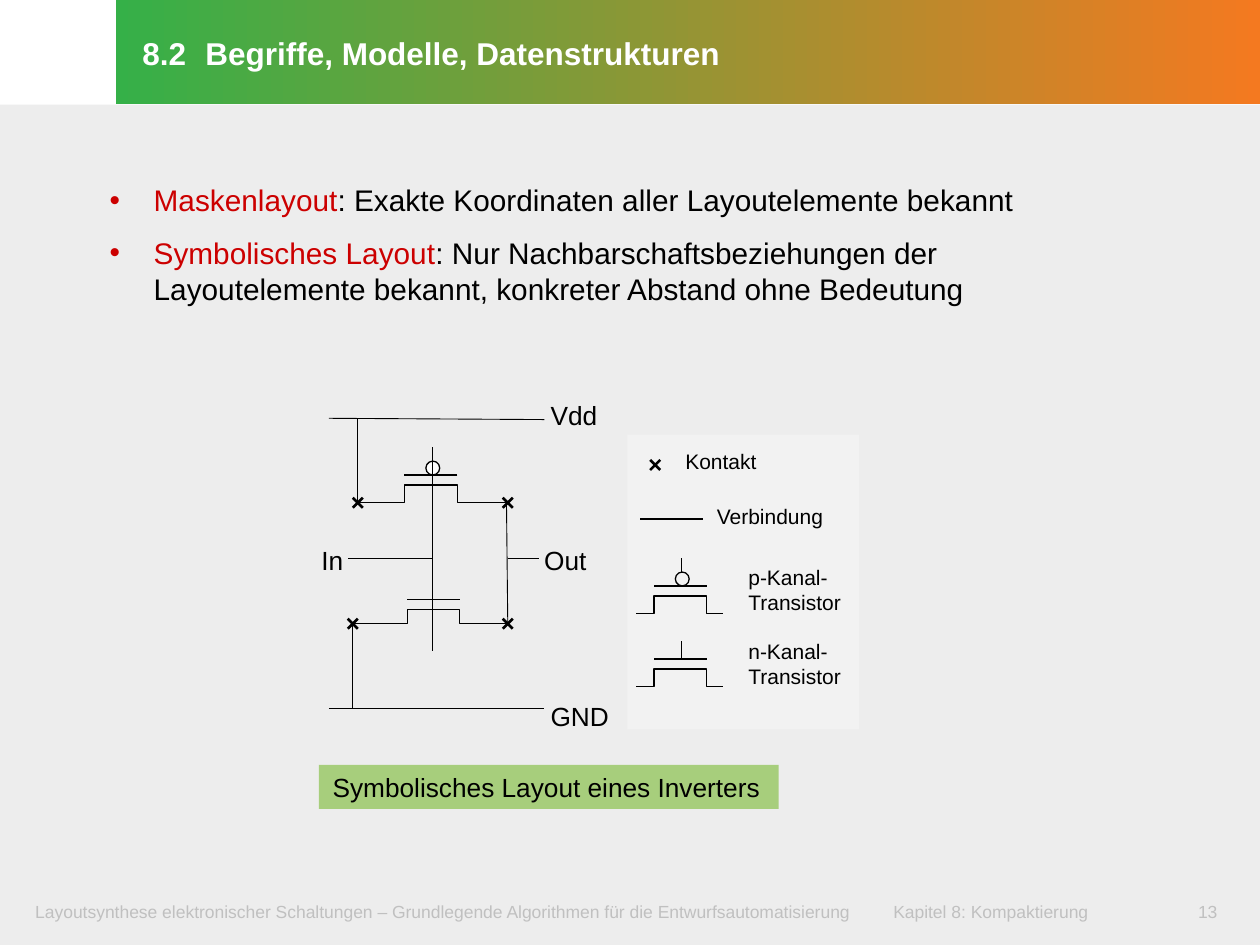
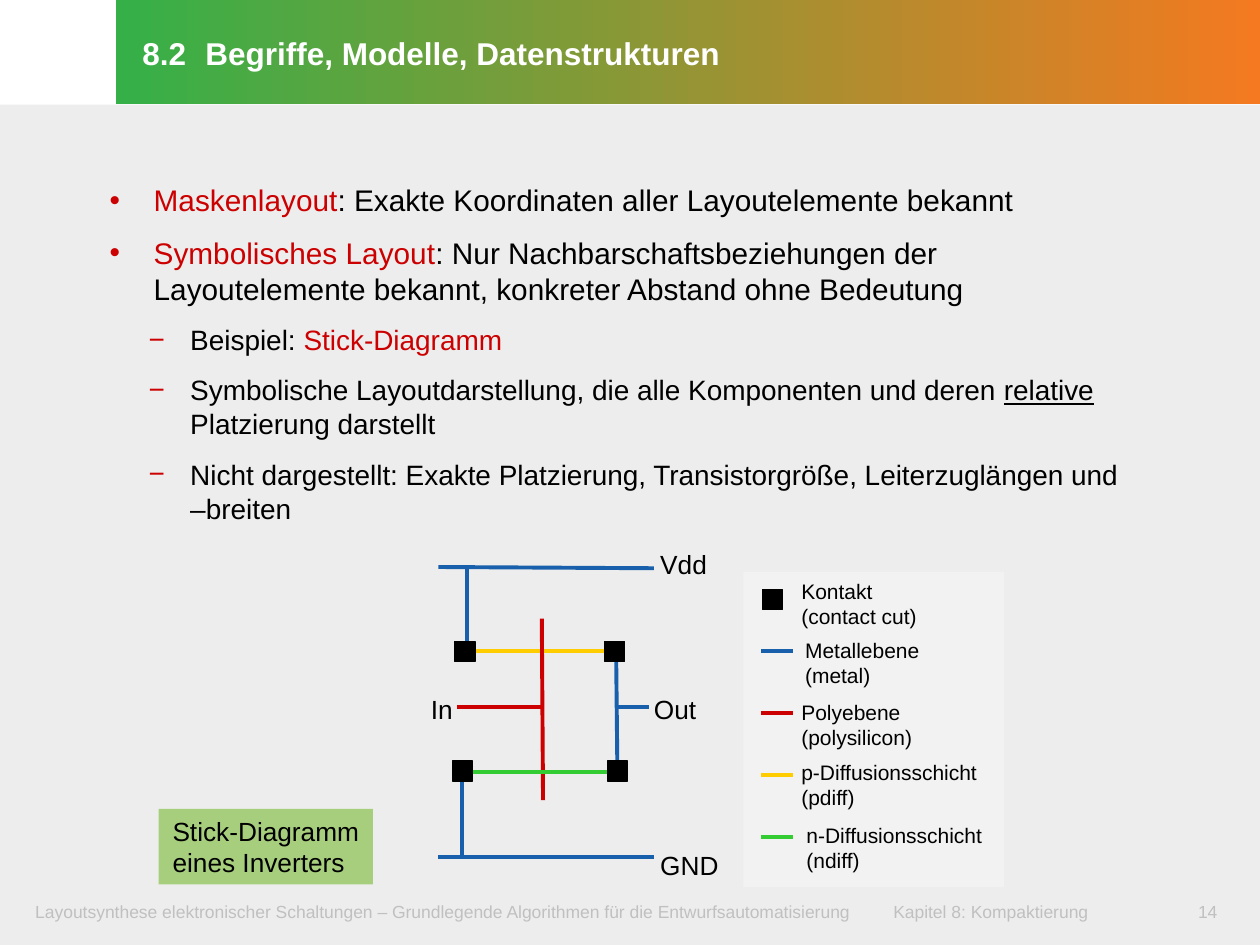
"""Build two slides on the symbolic layout and the stick diagram of an inverter."""
from lxml.etree import SubElement
from pptx import Presentation
from pptx.dml.color import RGBColor
from pptx.enum.shapes import MSO_CONNECTOR, MSO_SHAPE
from pptx.enum.text import MSO_ANCHOR, PP_ALIGN
from pptx.oxml.ns import qn
from pptx.util import Inches, Pt

FONT = "Arial"
BLACK, WHITE, RED = "000000", "FFFFFF", "CC0000"
BACKDROP, LEGEND, CAPTION, FOOTER = "EDEDED", "F2F2F2", "A7CE7C", "C0C0C0"
METAL, POLY, P_DIFFUSION, N_DIFFUSION = "1860AB", RED, "FFCC00", "33CC33"
TITLE = "8.2\tBegriffe, Modelle, Datenstrukturen"
BOOK = "Layoutsynthese elektronischer Schaltungen – Grundlegende Algorithmen für die Entwurfsautomatisierung"
CHAPTER = "Kapitel 8: Kompaktierung"


def add_box(slide, box, text="", size=15, color=BLACK, fill=None, margins=(0.11, 0.05, 0.11, 0.05)):
    """Add a text box, or a filled rectangle when a fill is given."""
    lengths = [Inches(value) for value in box]
    if fill:
        shape = slide.shapes.add_shape(MSO_SHAPE.RECTANGLE, *lengths)
        shape.shadow.inherit = False
        shape.fill.solid()
        shape.fill.fore_color.rgb = RGBColor.from_string(fill)
        shape.line.fill.background()
    else:
        shape = slide.shapes.add_textbox(*lengths)
    frame = shape.text_frame
    frame.word_wrap = True
    frame.vertical_anchor = MSO_ANCHOR.TOP
    frame.margin_left, frame.margin_top, frame.margin_right, frame.margin_bottom = map(Inches, margins)
    paragraph = frame.paragraphs[0]
    paragraph.alignment = PP_ALIGN.LEFT
    for number, row in enumerate(text.split("\n") if text else []):
        if number:
            paragraph.add_line_break()
            SubElement(paragraph._p.findall(qn("a:br"))[-1], qn("a:rPr"), sz=str(size * 100))
        run = paragraph.add_run()
        run.text = row
        run.font.name = FONT
        run.font.size = Pt(size)
        run.font.color.rgb = RGBColor.from_string(color)
    return shape


def add_line(slide, x1, y1, x2, y2, width=0.75, color=BLACK):
    """Add a straight line without a shadow."""
    line = slide.shapes.add_connector(MSO_CONNECTOR.STRAIGHT, Inches(x1), Inches(y1), Inches(x2), Inches(y2))
    line.line.width = Pt(width)
    line.line.color.rgb = RGBColor.from_string(color)
    SubElement(line._element.spPr, qn("a:effectLst"))


main_points = [
    (0, [("Maskenlayout", RED, False), (": Exakte Koordinaten aller Layoutelemente bekannt", BLACK, False)]),
    (0, [("Symbolisches Layout", RED, False),
         (": Nur Nachbarschaftsbeziehungen der Layoutelemente bekannt, konkreter Abstand ohne Bedeutung",
          BLACK, False)]),
]
stick_points = [
    (1, [("Beispiel: ", BLACK, False), ("Stick-Diagramm", RED, False)]),
    (1, [("Symbolische Layoutdarstellung, die alle Komponenten und deren ", BLACK, False),
         ("relative", BLACK, True), (" Platzierung darstellt", BLACK, False)]),
    (1, [("Nicht dargestellt: Exakte Platzierung, Transistorgröße, Leiterzuglängen und –breiten", BLACK, False)]),
]
levels = [("•", 17, 0.35, 0.35), ("−", 16, 0.64, 0.33)]

presentation = Presentation()
presentation.slide_width, presentation.slide_height = Inches(10), Inches(7.5)
slides = []
for page, points in ((13, main_points), (14, main_points + stick_points)):
    slide = presentation.slides.add_slide(presentation.slide_layouts[6])
    slides.append(slide)
    add_box(slide, (0, 0.83, 10, 6.67), fill=BACKDROP)

    footer_margins = (0.12, 0.06, 0.12, 0.06)
    footer = add_box(slide, (0.16, 7.09, 9.1, 0.32), f"{BOOK}\t{CHAPTER}", 10, FOOTER, margins=footer_margins)
    tabs = SubElement(footer.text_frame.paragraphs[0]._p.get_or_add_pPr(), qn("a:tabLst"))
    SubElement(tabs, qn("a:tab"), pos=str(Inches(6.81)), algn="l")
    number = add_box(slide, (9.29, 7.09, 0.59, 0.32), str(page), 10, FOOTER, margins=footer_margins)
    number.text_frame.paragraphs[0].alignment = PP_ALIGN.CENTER

    body = add_box(slide, (0.66, 1.39, 8.35, 4.92), margins=(0.21, 0.05, 0.1, 0.05)).text_frame
    for index, (level, runs) in enumerate(points):
        bullet, size, indent, hanging = levels[level]
        paragraph = body.add_paragraph() if index else body.paragraphs[0]
        paragraph.level = level
        properties = paragraph._p.get_or_add_pPr()
        properties.set("marL", str(Inches(indent)))
        properties.set("indent", str(-Inches(hanging)))
        SubElement(SubElement(properties, qn("a:buClr")), qn("a:srgbClr"), val=RED)
        SubElement(properties, qn("a:buFont"), typeface=FONT)
        SubElement(properties, qn("a:buChar"), char=bullet)
        paragraph.line_spacing = 1.02
        if index:
            paragraph.space_before = Pt(9)
        for text, color, underline in runs:
            run = paragraph.add_run()
            run.text = text
            run.font.name = FONT
            run.font.size = Pt(size)
            run.font.color.rgb = RGBColor.from_string(color)
            if underline:
                run.font.underline = True

    title = add_box(slide, (0.92, 0, 9.08, 0.83), TITLE, 18, WHITE, METAL, (0.21, 0.05, 0.1, 0.07))
    title.fill.gradient()
    title.fill.gradient_angle = 0
    for stop, (position, color) in zip(title.fill.gradient_stops, ((0, "35B048"), (1, "F47920"))):
        stop.position = position
        stop.color.rgb = RGBColor.from_string(color)
    title.text_frame.vertical_anchor = MSO_ANCHOR.MIDDLE
    title.text_frame.paragraphs[0].line_spacing = Pt(23.5)
    title.text_frame.paragraphs[0].runs[0].font.bold = True

symbolic, stick = slides

wires = [
    (2.61, 3.32, 4.32, 3.33, 0.5, METAL),
    (2.84, 3.99, 2.84, 3.32, 0.75, METAL),
    (4.02, 3.99, 4.03, 4.95, 0.5, METAL),
    (2.8, 5.62, 2.8, 4.95, 0.75, METAL),
    (2.61, 5.62, 4.32, 5.62, 0.5, METAL),
    (4.03, 4.43, 4.28, 4.43, 0.75, METAL),
    (3.43, 4.43, 2.76, 4.43, 0.5, POLY),
]
terminals = [("Vdd", 4.26, 3.12, 0.78), ("GND", 4.26, 5.51, 0.69), ("Out", 4.21, 4.27, 0.66), ("In", 2.44, 4.27, 0.51)]
stick_dx, stick_dy = 0.87, 1.18
for x1, y1, x2, y2, width, layer in wires:
    add_line(symbolic, x1, y1, x2, y2, width)
    add_line(stick, x1 + stick_dx, y1 + stick_dy, x2 + stick_dx, y2 + stick_dy, 2.25, layer)
for text, left, top, width in terminals:
    add_box(symbolic, (left, top, width, 0.35), text)
    add_box(stick, (left + stick_dx, top + stick_dy, width, 0.35), text)

add_box(symbolic, (4.98, 3.45, 1.84, 2.34), fill=LEGEND)
transistors = [
    (3.21, 3.85, 3.07, 3.77, 0.14, 0.3, WHITE, True),
    (3.23, 4.84, 2.8, 4.02, 0.11, 0, None, False),
    (5.19, 4.73, 5.05, 5.74, 0.14, 0.3, None, True),
    (5.19, 5.31, 5.05, 5.74, 0.14, 0.22, None, False),
]
for gate, top, lead_left, lead_right, depth, stub, bubble_fill, p_channel in transistors:
    gate_right, base = gate + 0.42, top + depth
    outline = [(lead_left, base), (gate, base), (gate, top), (gate_right, top), (gate_right, base), (lead_right, base)]
    corners = [(Inches(x), Inches(y)) for x, y in outline]
    builder = symbolic.shapes.build_freeform(*corners[0], scale=1.0)
    builder.add_line_segments(corners[1:], close=False)
    parts = [builder.convert_to_shape()]
    if p_channel:
        parts.append(symbolic.shapes.add_shape(
            MSO_SHAPE.OVAL, Inches(gate + 0.17), Inches(top - 0.19), Inches(0.11), Inches(0.11)))
    for part in parts:
        part.shadow.inherit = False
        part.fill.background()
        part.line.color.rgb = RGBColor.from_string(BLACK)
        part.line.width = Pt(0.75 if depth == 0.14 else 0.5)
    if bubble_fill:
        parts[-1].fill.solid()
        parts[-1].fill.fore_color.rgb = RGBColor.from_string(bubble_fill)
    add_line(symbolic, gate_right, top - 0.08, gate, top - 0.08)
    if stub:
        add_line(symbolic, gate + 0.22, top - stub, gate + 0.22, top - (0.19 if p_channel else 0.08))

add_line(symbolic, 2.84, 3.99, 3.1, 3.99)
add_line(symbolic, 4.02, 3.99, 3.77, 3.99)
add_line(symbolic, 3.43, 3.58, 3.43, 5.17, 0.5)
add_line(symbolic, 5.08, 4.12, 5.58, 4.12)
for x, y in ((2.8, 4.95), (4.03, 4.95), (4.03, 3.99), (2.84, 3.99), (5.2, 3.69)):
    add_line(symbolic, x - 0.04, y + 0.04, x + 0.04, y - 0.04, 1.5)
    add_line(symbolic, x - 0.04, y - 0.04, x + 0.04, y + 0.04, 1.5)
for text, left, top, height in (("Kontakt", 5.33, 3.51, 0.3), ("Verbindung", 5.58, 3.95, 0.3),
                                ("p-Kanal-\nTransistor", 5.83, 4.43, 0.5),
                                ("n-Kanal-\nTransistor", 5.83, 5.02, 0.5)):
    add_box(symbolic, (left, top, 2.17, height), text, 12)
add_box(symbolic, (2.53, 6.07, 3.65, 0.35), "Symbolisches Layout eines Inverters", fill=CAPTION)

add_line(stick, 3.71, 5.17, 4.9, 5.17, 2.25, P_DIFFUSION)
add_line(stick, 4.3, 4.91, 4.31, 6.35, 2.25, POLY)
add_line(stick, 3.69, 6.13, 4.88, 6.13, 2.25, N_DIFFUSION)
add_box(stick, (5.9, 4.54, 2.07, 2.5), fill=LEGEND)
for left, top in ((3.61, 5.09), (4.8, 5.09), (4.82, 6.04), (3.59, 6.04), (6.05, 4.68)):
    contact = add_box(stick, (left, top, 0.16, 0.16), fill=BLACK)
    contact.line.color.rgb = RGBColor.from_string(BLACK)
    contact.line.width = Pt(0.75)
for row, layer in enumerate((METAL, POLY, P_DIFFUSION, N_DIFFUSION)):
    y = 5.17 + 0.49 * row
    add_line(stick, 6.04, y, 6.29, y, 2.25, layer)
for text, left, top in (("Kontakt\n(contact cut)", 6.25, 4.54), ("Metallebene\n(metal)", 6.28, 5.01),
                        ("Polyebene\n(polysilicon)", 6.25, 5.5), ("p-Diffusionsschicht\n(pdiff)", 6.25, 5.98),
                        ("n-Diffusionsschicht\n(ndiff)", 6.29, 6.48)):
    add_box(stick, (left, top, 1.78, 0.5), text, 12)
caption = add_box(stick, (1.26, 6.42, 1.7, 0.6), "Stick-Diagramm\neines Inverters", fill=CAPTION)
caption.text_frame.word_wrap = False

presentation.save("out.pptx")
